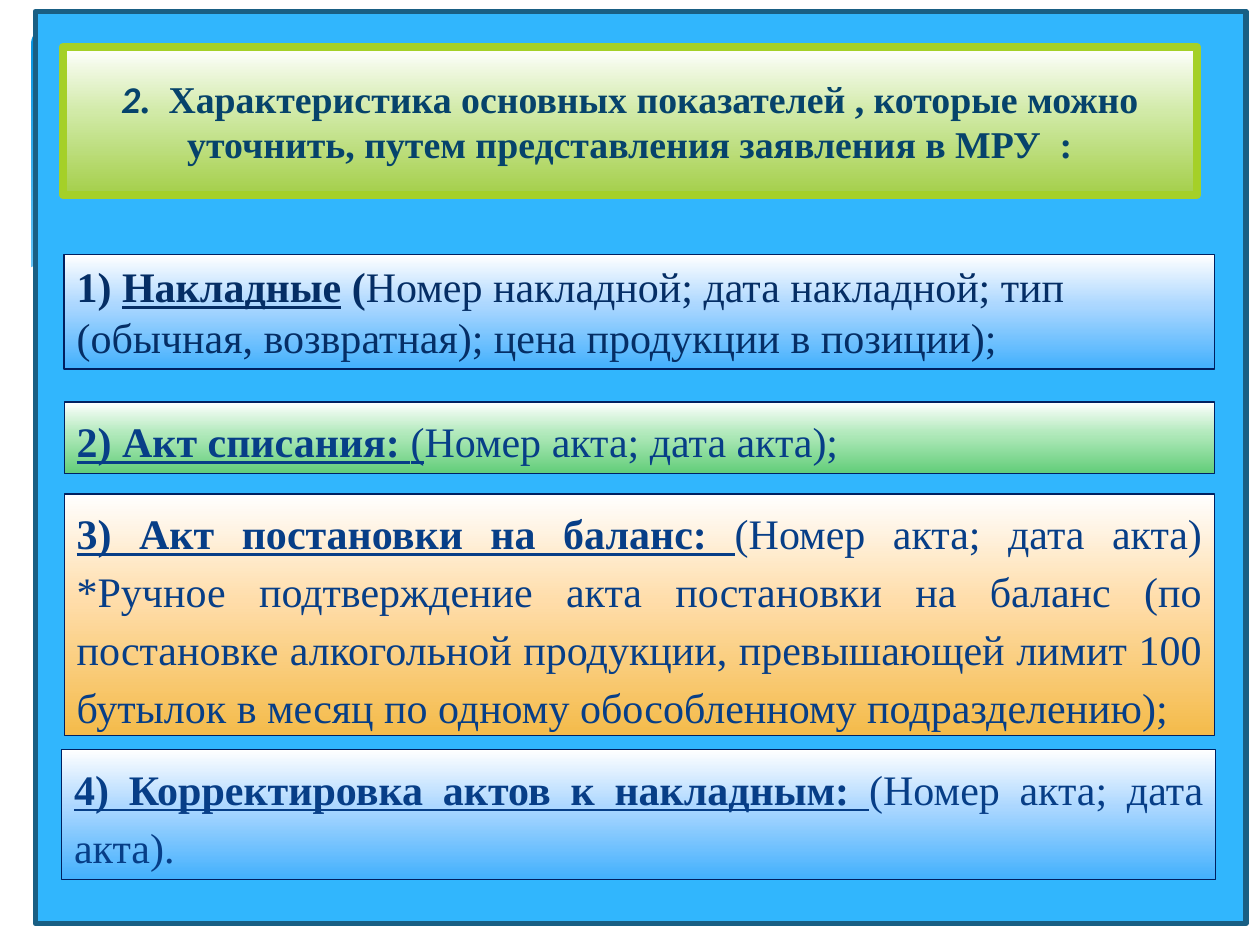
import copy

import pptx
import pptx.dml.color
import pptx.enum.shapes
import pptx.enum.text
import pptx.oxml
import pptx.oxml.ns
import pptx.util

Inches = pptx.util.Inches
Pt = pptx.util.Pt
RGBColor = pptx.dml.color.RGBColor
Shape = pptx.enum.shapes.MSO_SHAPE
Align = pptx.enum.text.PP_ALIGN
Anchor = pptx.enum.text.MSO_ANCHOR
qn = pptx.oxml.ns.qn

WHITE = RGBColor(0xFF, 0xFF, 0xFF)
SKY = RGBColor(0x31, 0xB6, 0xFD)
FRAME = RGBColor(0x19, 0x5F, 0x84)
LIME = RGBColor(0xA5, 0xD0, 0x28)
NAVY = RGBColor(0x00, 0x20, 0x60)
TITLE_INK = RGBColor(0x06, 0x43, 0x6B)
DARK_INK = RGBColor(0x05, 0x2E, 0x65)
INK = RGBColor(0x07, 0x3E, 0x87)


def fade(middle, end):
    return [(0, WHITE), (0.44, RGBColor.from_string(middle)), (1, RGBColor.from_string(end))]


BLUE_FADE = fade("ACD7FF", "42B0FD")
GREEN_FADE = fade("B1E9BB", "61CD78")
ORANGE_FADE = fade("FFDDAA", "F4BB4A")
LIME_FADE = fade("D1EAA7", "A4CF4A")
BAND_FADE = [(0, RGBColor(0x02, 0x93, 0xE0)), (0.9, RGBColor(0x83, 0xD3, 0xFE))]

# Content: each span is (text, styles), b = bold, i = italic, u = underlined, c = Calibri
TITLE = [
    ("2", "bic"),
    (".  Характеристика основных показателей , которые можно уточнить, "
     "путем представления заявления в МРУ  :", "b"),
]
ITEMS = [
    dict(area=(0.51, 2.02, 9.13, 0.91), fill=BLUE_FADE, line_width=1,
         text=dict(color=DARK_INK, align=Align.LEFT, line_spacing=1),
         spans=[("1) ", "b"), ("Накладные", "bu"), (" (", "b"),
                ("Номер накладной; дата накладной; тип (обычная, возвратная); "
                 "цена продукции в позиции);", "")]),
    dict(area=(0.51, 3.19, 9.13, 0.57), fill=GREEN_FADE, text=dict(space=6),
         spans=[("2) Акт списания: ", "bu"), ("(", "u"),
                ("Номер акта; дата акта);", "")]),
    dict(area=(0.51, 3.92, 9.13, 1.92), fill=ORANGE_FADE,
         spans=[("3) Акт постановки на баланс: ", "bu"),
                ("(Номер акта; дата акта) *Ручное подтверждение акта постановки на баланс "
                 "(по постановке алкогольной продукции, превышающей лимит 100 бутылок "
                 "в месяц по одному обособленному подразделению);", "")]),
    dict(area=(0.49, 5.95, 9.16, 1.03), fill=BLUE_FADE, text=dict(space=6),
         spans=[("4) Корректировка актов к накладным: ", "bu"),
                ("(Номер акта; дата акта).", "")]),
]
WAVE = [(9.77, 2.46), (9.3, 2.62), (8.75, 2.73), (8.09, 2.77), (7.26, 2.72), (6.26, 2.58),
        (5.29, 2.39), (4.47, 2.2), (3.65, 2.02), (2.92, 1.9), (2.3, 1.85), (1.77, 1.84),
        (1.19, 1.87), (0.67, 1.97), (0.36, 2.07), (0.23, 2.13), (0.23, 3.29), (9.77, 3.29)]


def paint(shape, fill, line=None, line_width=0.75):
    """Fill with one colour or a list of (position, colour) stops, top to bottom."""
    shape.shadow.inherit = False
    if isinstance(fill, list):
        shape.fill.gradient()
        shape.fill.gradient_angle = 270
        stop_list = shape._element.spPr.find(".//" + qn("a:gsLst"))
        while len(stop_list) < len(fill):
            stop_list.append(copy.deepcopy(stop_list[-1]))
        for stop, (position, color) in zip(shape.fill.gradient_stops, fill):
            stop.position = position
            stop.color.rgb = color
    else:
        shape.fill.solid()
        shape.fill.fore_color.rgb = fill
    if line is None:
        shape.line.fill.background()
    else:
        shape.line.color.rgb = line
        shape.line.width = Pt(line_width)
        outline = shape._element.spPr.find(qn("a:ln"))
        outline.append(pptx.oxml.parse_xml("<a:round %s/>" % pptx.oxml.ns.nsdecls("a")))


def add_box(page, area, fill, kind=Shape.RECTANGLE, **line):
    box = page.shapes.add_shape(kind, *map(Inches, area))
    paint(box, fill, **line)
    return box


def write(box, spans, size=24, color=INK, align=Align.JUSTIFY, anchor=Anchor.TOP,
          line_spacing=1.15, space=0):
    frame = box.text_frame
    frame.word_wrap = True
    frame.vertical_anchor = anchor
    para = frame.paragraphs[0]
    para.alignment = align
    para.line_spacing = line_spacing
    para.space_before = para.space_after = Pt(space)
    for text, styles in spans:
        span = para.add_run()
        span.text = text
        span.font.name = "Calibri" if "c" in styles else "Times New Roman"
        span.font.size = Pt(size)
        span.font.color.rgb = color
        span.font.bold = "b" in styles
        span.font.italic = "i" in styles
        span.font.underline = "u" in styles


def main():
    deck = pptx.Presentation()
    deck.slide_width, deck.slide_height = Inches(10), Inches(7.5)
    page = deck.slides.add_slide(deck.slide_layouts[6])

    # Backdrop: blue band, white wave, framed panel
    band = add_box(page, (0.25, 0.25, 9.51, 2.7), BAND_FADE, kind=Shape.ROUNDED_RECTANGLE)
    band.adjustments[0] = 0.03
    points = [(Inches(x), Inches(y)) for x, y in WAVE]
    builder = page.shapes.build_freeform(*points[0])
    builder.add_line_segments(points[1:], close=True)
    paint(builder.convert_to_shape(), WHITE)
    add_box(page, (0.28, 0.09, 9.61, 7.24), SKY, line=FRAME, line_width=3)

    # Title
    title = add_box(page, (0.5, 0.37, 9, 1.18), LIME_FADE, line=LIME, line_width=4.5)
    write(title, TITLE, size=21.6, color=TITLE_INK, align=Align.CENTER,
          anchor=Anchor.MIDDLE, line_spacing=1)

    # Numbered items
    for item in ITEMS:
        box = add_box(page, item["area"], item["fill"], line=NAVY,
                      line_width=item.get("line_width", 0.75))
        write(box, item["spans"], **item.get("text", {}))

    deck.save("out.pptx")


if __name__ == "__main__":
    main()
